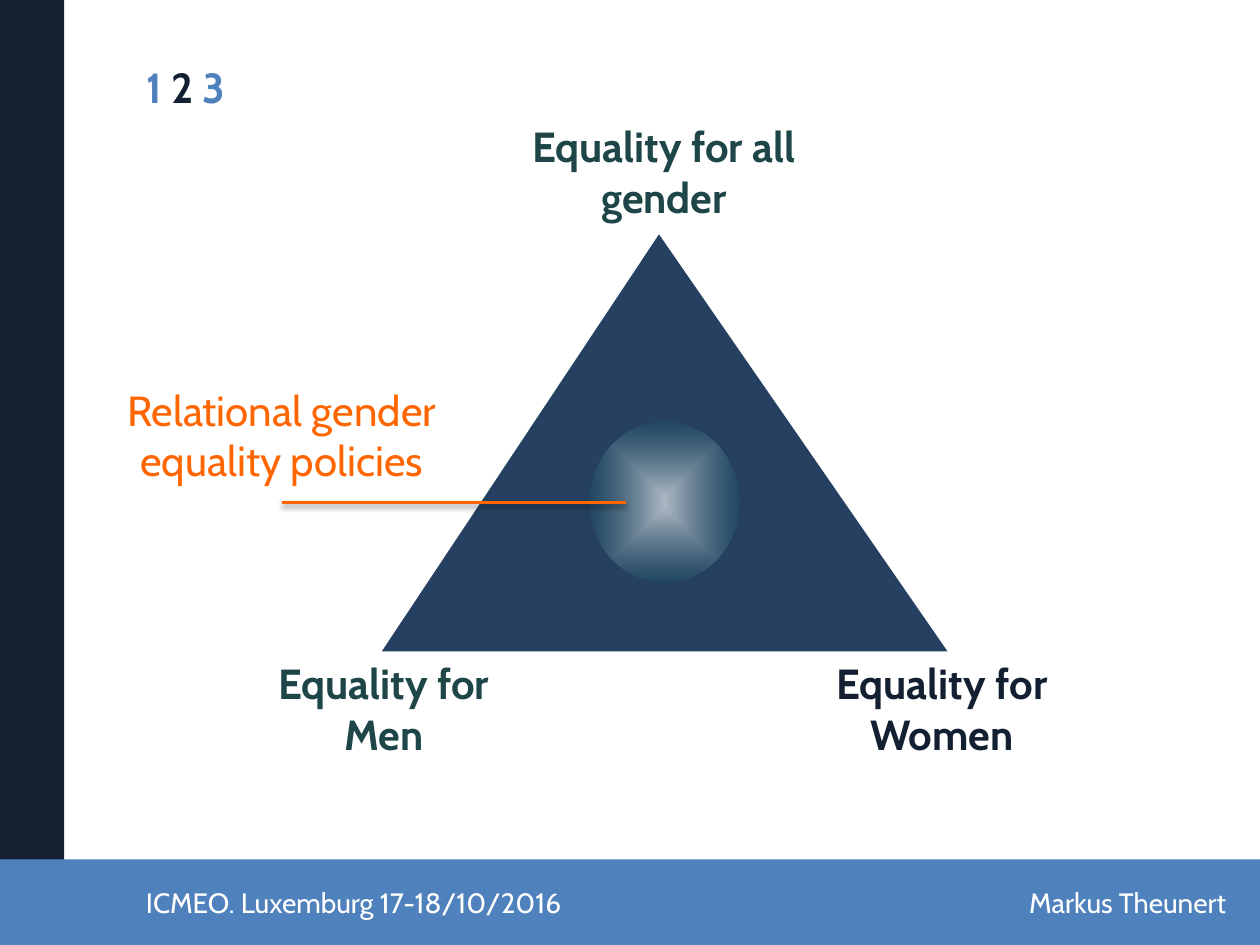
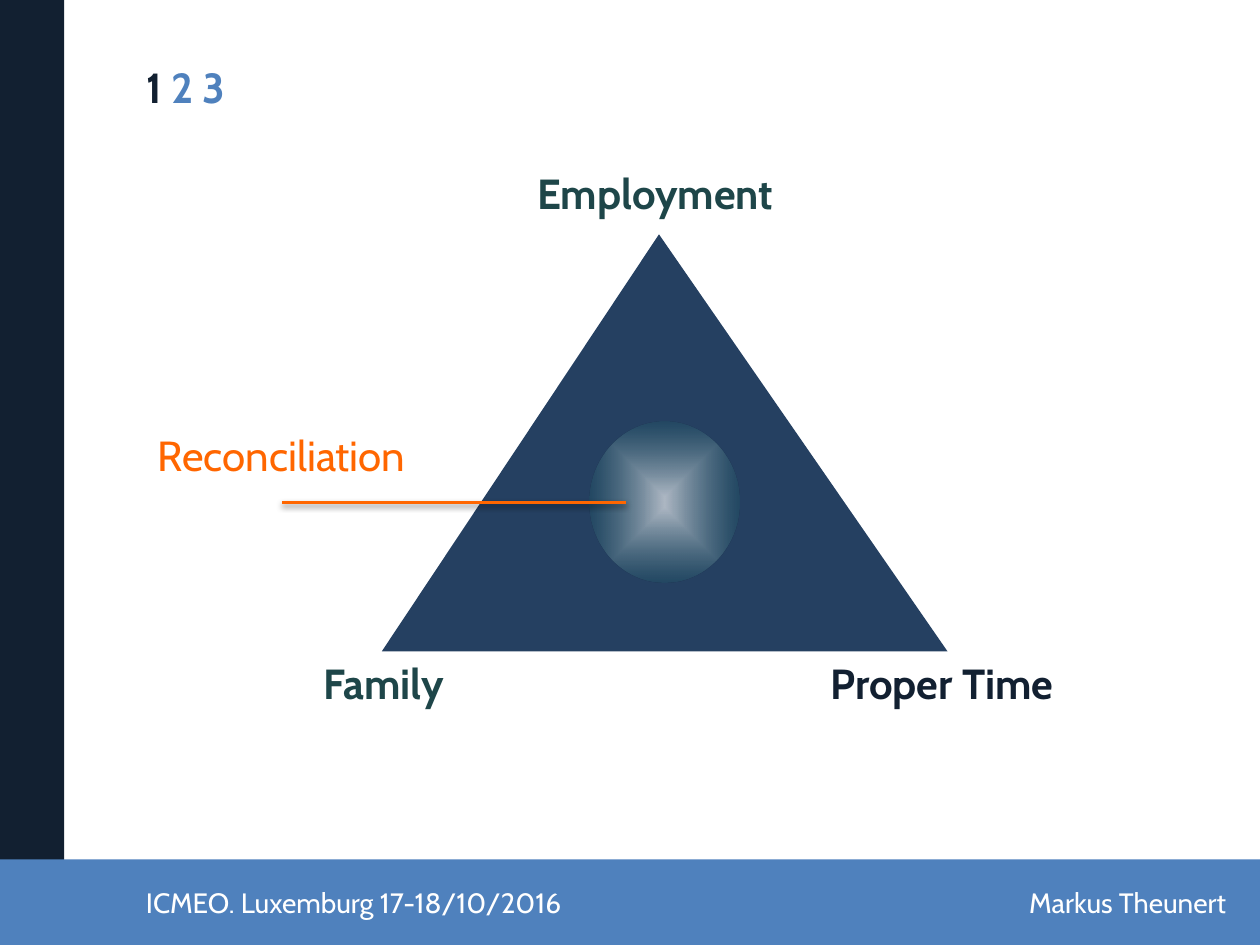
from lxml import etree
from pptx import Presentation
from pptx import util as u
from pptx.dml.color import RGBColor
from pptx.enum import shapes, text
from pptx.oxml import parse_xml
from pptx.oxml.ns import nsdecls

COLORS = {
    "night": "122031",
    "band": "4F81BD",
    "triangle": "254061",
    "label": "1E4649",
    "accent": "FF6600",
    "glow_edge": "215968",
    "white": "FFFFFF",
    "black": "000000",
}
FONT = "Cabin"
PX = 9144  # EMU per px, 100 px to the inch
WIDTH, HEIGHT = 1000, 750
LINE_HEIGHT, BOX_PADDING = 40, 11


class Deck:
    """The shared style, the presentation and its current slide."""

    def __init__(self):
        self.prs = Presentation()
        self.prs.slide_width, self.prs.slide_height = self.px(WIDTH, HEIGHT)
        self.slide = None

    @staticmethod
    def px(*lengths):
        return [u.Emu(length * PX) for length in lengths]

    @staticmethod
    def rgb(color):
        return RGBColor.from_string(COLORS[color])

    def style(self, font, size, color, bold=False):
        font.name, font.size, font.bold = FONT, u.Pt(size), bold
        font.color.rgb = self.rgb(color)

    def add_slide(self, stage):
        """Start a slide with bands, footer and the stage counter as title."""
        self.slide = self.prs.slides.add_slide(self.prs.slide_layouts[5])
        self.shape("RECTANGLE", 0, 0, 51, HEIGHT, "night")
        self.shape("RECTANGLE", 0, 682, WIDTH, HEIGHT - 682, "band")
        self.text("ICMEO. Luxemburg 17-18/10/2016", 106, 698, 408, 37, 16, "white")
        self.text("Markus Theunert", 807, 698, 193, 37, 16, "white")
        self.stage_title(stage)

    def stage_title(self, current):
        title = self.slide.shapes.title
        title.left, title.top, title.width, title.height = self.px(106, 44, 882, 51)
        frame = title.text_frame
        frame.auto_size = text.MSO_AUTO_SIZE.NONE
        frame.vertical_anchor = text.MSO_ANCHOR.TOP
        counter = frame.paragraphs[0]
        counter.alignment = text.PP_ALIGN.LEFT
        for stage in (1, 2, 3):
            run = counter.add_run()
            run.text = f"{stage} " if stage < 3 else f"{stage}"
            self.style(run.font, 24, "night" if stage == current else "band", True)

    def text(self, words, left, top, width, height, size, color,
             bold=False, align=text.PP_ALIGN.LEFT):
        box = self.slide.shapes.add_textbox(*self.px(left, top, width, height))
        box.text_frame.word_wrap = True
        paragraph = box.text_frame.paragraphs[0]
        paragraph.text = words
        paragraph.alignment = align
        self.style(paragraph.font, size, color, bold)

    def label(self, words, left, top, width, lines, color, bold=True):
        height = lines * LINE_HEIGHT + BOX_PADDING
        self.text(words, left, top, width, height, 24, color, bold,
                  text.PP_ALIGN.CENTER)

    def shape(self, kind, left, top, width, height, color):
        shape = self.slide.shapes.add_shape(
            shapes.MSO_SHAPE[kind], *self.px(left, top, width, height))
        shape.shadow.inherit = False
        shape.fill.solid()
        shape.fill.fore_color.rgb = self.rgb(color)
        shape.line.fill.background()
        return shape

    def glow(self, left, top, width, height):
        """Add an ellipse that fades from a pale centre to a teal edge."""
        ellipse = self.shape("OVAL", left, top, width, height, "white")
        stops = "".join(
            f'<a:gs pos="{pos}"><a:srgbClr val="{COLORS[color]}">'
            f'<a:alpha val="{alpha}"/></a:srgbClr></a:gs>'
            for pos, color, alpha in ((0, "white", 39000),
                                      (100000, "glow_edge", 18000)))
        gradient = parse_xml(
            f'<a:gradFill {nsdecls("a")} rotWithShape="1"><a:gsLst>{stops}</a:gsLst>'
            '<a:path path="shape"><a:fillToRect l="50000" t="50000" r="50000" '
            'b="50000"/></a:path></a:gradFill>')
        properties = ellipse.element.spPr
        properties.replace(properties.solidFill, gradient)

    def pointer(self, start_x, end_x, y):
        """Add a horizontal accent line with a soft shadow below it."""
        line = self.slide.shapes.add_connector(
            shapes.MSO_CONNECTOR.STRAIGHT, *self.px(start_x, y, end_x, y))
        line.line.color.rgb = self.rgb("accent")
        line.line.width = u.Pt(2)
        effects = parse_xml(f'<a:effectLst {nsdecls("a")}/>')
        shadow = etree.SubElement(
            effects, effects.tag.replace("effectLst", "outerShdw"),
            blurRad="40000", dist="20000", dir="5400000", rotWithShape="0")
        tint = etree.SubElement(
            shadow, effects.tag.replace("effectLst", "srgbClr"), val=COLORS["black"])
        etree.SubElement(
            tint, effects.tag.replace("effectLst", "alpha"), val="38000")
        line.element.spPr.append(effects)

    def triangle_slide(self, stage, lines, apex, apex_at, men_side, women_side,
                       centre, centre_top):
        """Build a triangle with three named corners and a named centre."""
        self.add_slide(stage)
        triangle = self.shape("ISOSCELES_TRIANGLE", 303, 186, 449, 331, "triangle")
        triangle.adjustments[0] = 0.49
        self.label(women_side, 602, 517, 291, lines, "night")
        self.label(apex, *apex_at, 324, lines, "label")
        self.label(men_side, 185, 517, 239, lines, "label")
        for _ in range(2):
            self.glow(468, 335, 119, 127)
        self.label(centre, 49, centre_top, 349, lines, "accent", bold=False)
        self.pointer(224, 497, 399)


def main():
    deck = Deck()
    deck.triangle_slide(
        2, 2, "Equality for all gender", (365, 91), "Equality for Men",
        "Equality for Women", "Relational gender equality policies", 300)
    deck.triangle_slide(
        1, 1, "Employment", (358, 128), "Family", "Proper Time",
        "Reconciliation", 336)
    deck.prs.save("out.pptx")


if __name__ == "__main__":
    main()
